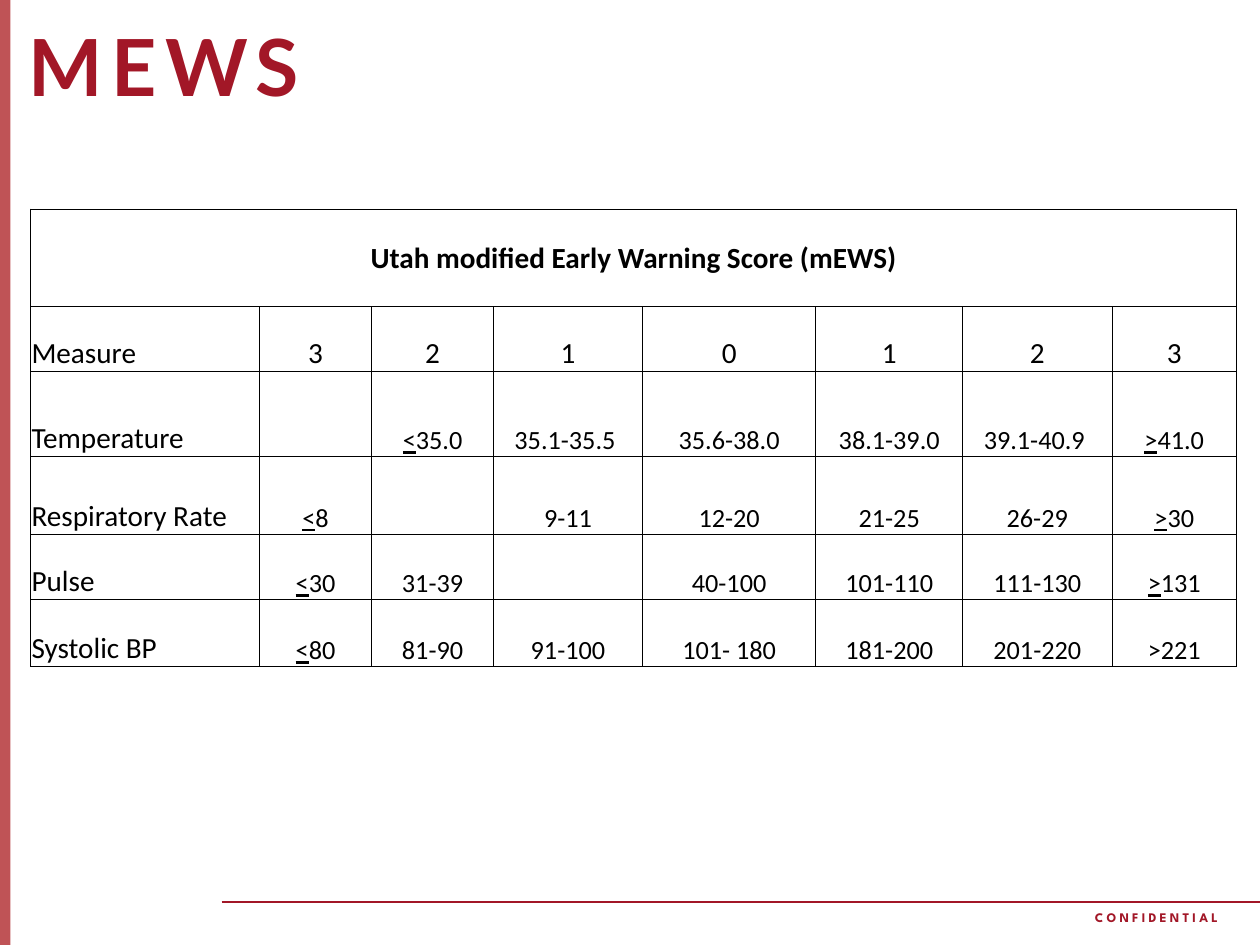
from lxml.etree import SubElement
from pptx import Presentation
from pptx.dml.color import RGBColor
from pptx.enum.shapes import MSO_CONNECTOR, MSO_SHAPE
from pptx.enum.text import MSO_ANCHOR, PP_ALIGN
from pptx.oxml import parse_xml
from pptx.oxml.ns import nsdecls, qn
from pptx.util import Inches, Pt

COLORS = {"bar": "BF5356", "accent": "A21727", "text": "000000",
          "border": "000000", "cell": "FFFFFF"}
TITLE = "MEWS"
FOOTER = "CONFIDENTIAL"
SCORE_TITLE = "Utah modified Early Warning Score (mEWS)"
SCORES = ("Measure", "3", "2", "1", "0", "1", "2", "3")
MEASURES = [
    ("Temperature", "", ("<", "35.0"), "35.1-35.5 ", "35.6-38.0", "38.1-39.0", "39.1-40.9 ", (">", "41.0")),
    ("Respiratory Rate", ("<", "8"), "", "9-11", "12-20", "21-25", "26-29", (">", "30")),
    ("Pulse", ("<", "30"), "31-39", "", "40-100", "101-110", "111-130", (">", "131")),
    ("Systolic BP", ("<", "80"), "81-90", "91-100", "101- 180", "181-200", "201-220", ">221"),
]
COLUMN_WIDTHS = (2.18, 1.07, 1.16, 1.42, 1.65, 1.4, 1.42, 1.19)
ROW_HEIGHTS = (0.93, 0.62, 0.81, 0.74, 0.62, 0.64)


def rgb(name):
    return RGBColor.from_string(COLORS[name])


def write(frame, text, size=18, font="Calibri", color="text", bold=False,
          align=PP_ALIGN.LEFT, spacing=0, line_spacing=None):
    """Write text into a frame; a (sign, value) pair gets an underlined sign."""
    paragraph = frame.paragraphs[0]
    paragraph.alignment = align
    if line_spacing:
        paragraph.line_spacing = line_spacing
    sign, value = text if isinstance(text, tuple) else ("", text)
    for part, underline in ((sign, True), (value, False)):
        if not part:
            continue
        run = paragraph.add_run()
        run.text = part
        run.font.size = Pt(size)
        run.font.name = font
        run.font.bold = bold
        run.font.underline = underline
        run.font.color.rgb = rgb(color)
        if spacing:
            run.font._element.set("spc", str(round(spacing * 100)))


def add_label(slide, text, left, top, width, height, anchor=MSO_ANCHOR.TOP, **style):
    frame = slide.shapes.add_textbox(*map(Inches, (left, top, width, height))).text_frame
    frame.word_wrap = True
    frame.vertical_anchor = anchor
    write(frame, text, **style)


def style_cell(cell, anchor):
    cell.vertical_anchor = anchor
    cell.margin_left = cell.margin_right = cell.margin_top = Inches(0.01)
    cell.margin_bottom = 0
    properties = cell._tc.get_or_add_tcPr()
    for side in ("lnL", "lnR", "lnT", "lnB"):
        properties.append(parse_xml(
            f'<a:{side} {nsdecls("a")} w="{Pt(0.5)}"><a:solidFill>'
            f'<a:srgbClr val="{COLORS["border"]}"/></a:solidFill></a:{side}>'))
    cell.fill.solid()
    cell.fill.fore_color.rgb = rgb("cell")


def add_score_table(slide):
    rows = [(SCORE_TITLE,) + ("",) * (len(SCORES) - 1), SCORES, *MEASURES]
    table = slide.shapes.add_table(
        len(rows), len(SCORES), Inches(0.29), Inches(1.99),
        Inches(sum(COLUMN_WIDTHS)), Inches(sum(ROW_HEIGHTS))).table
    table.first_row = table.horz_banding = False
    for column, width in zip(table.columns, COLUMN_WIDTHS):
        column.width = Inches(width)
    for row, height in zip(table.rows, ROW_HEIGHTS):
        row.height = Inches(height)
    for r, row in enumerate(rows):
        for c, text in enumerate(row):
            cell = table.cell(r, c)
            style_cell(cell, MSO_ANCHOR.BOTTOM if r else MSO_ANCHOR.MIDDLE)
            write(cell.text_frame, text, bold=r == 0,
                  size=20 if r < 2 or c == 0 else 18,
                  align=PP_ALIGN.LEFT if r and c == 0 else PP_ALIGN.CENTER)
    table.cell(0, 0).merge(table.cell(0, len(SCORES) - 1))


def main():
    deck = Presentation()
    deck.slide_width, deck.slide_height = Inches(12), Inches(9)
    slide = deck.slides.add_slide(deck.slide_layouts[6])

    side_bar = slide.shapes.add_shape(MSO_SHAPE.RECTANGLE, 0, 0, Inches(0.1), Inches(9))
    side_bar.shadow.inherit = False
    side_bar.fill.solid()
    side_bar.fill.fore_color.rgb = rgb("bar")
    side_bar.line.fill.background()

    add_label(slide, FOOTER, 10.33, 8.61, 1.6, 0.25, size=9,
              font="League Spartan", color="accent", bold=True, spacing=2.2)
    footer_rule = slide.shapes.add_connector(
        MSO_CONNECTOR.STRAIGHT, Inches(2.11), Inches(8.59), Inches(12), Inches(8.59))
    footer_rule.line.color.rgb = rgb("accent")
    footer_rule.line.width = Pt(1)
    SubElement(footer_rule._element.spPr, qn("a:effectLst"))

    add_score_table(slide)
    add_label(slide, TITLE, 0.17, 0, 10, 1.36, anchor=MSO_ANCHOR.MIDDLE, size=54,
              font="Lato", color="accent", bold=True, spacing=6, line_spacing=0.9)
    deck.save("out.pptx")


if __name__ == "__main__":
    main()
